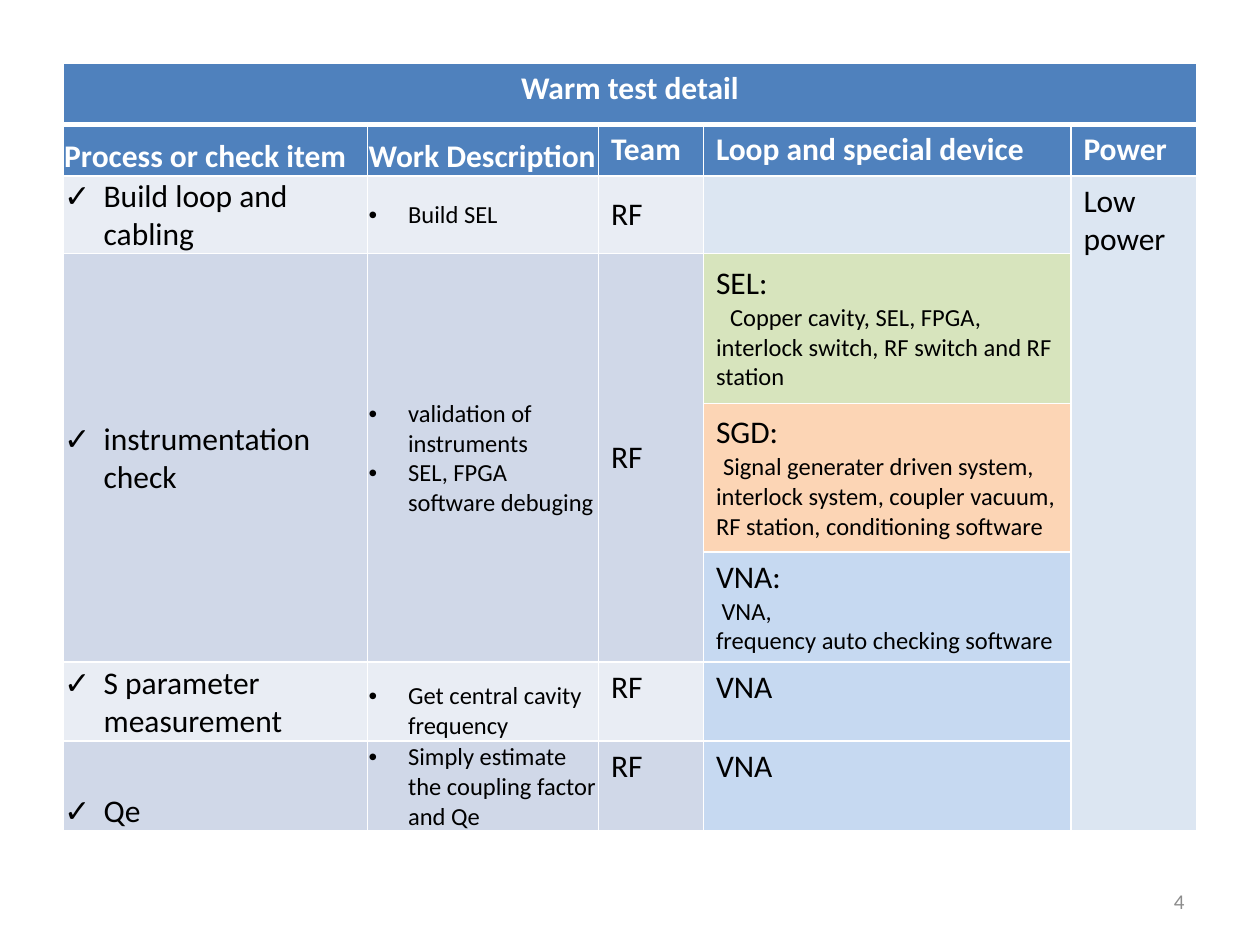
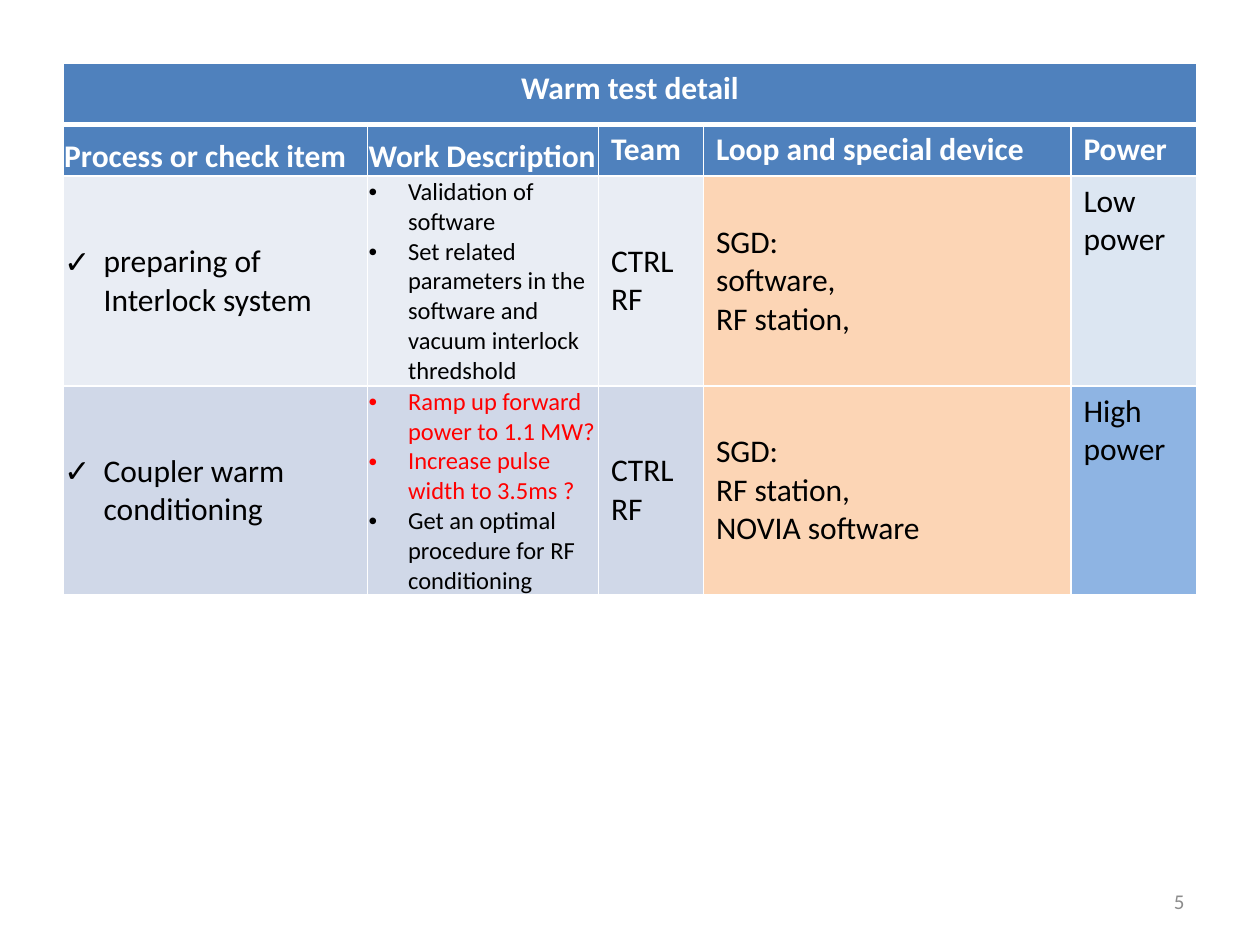
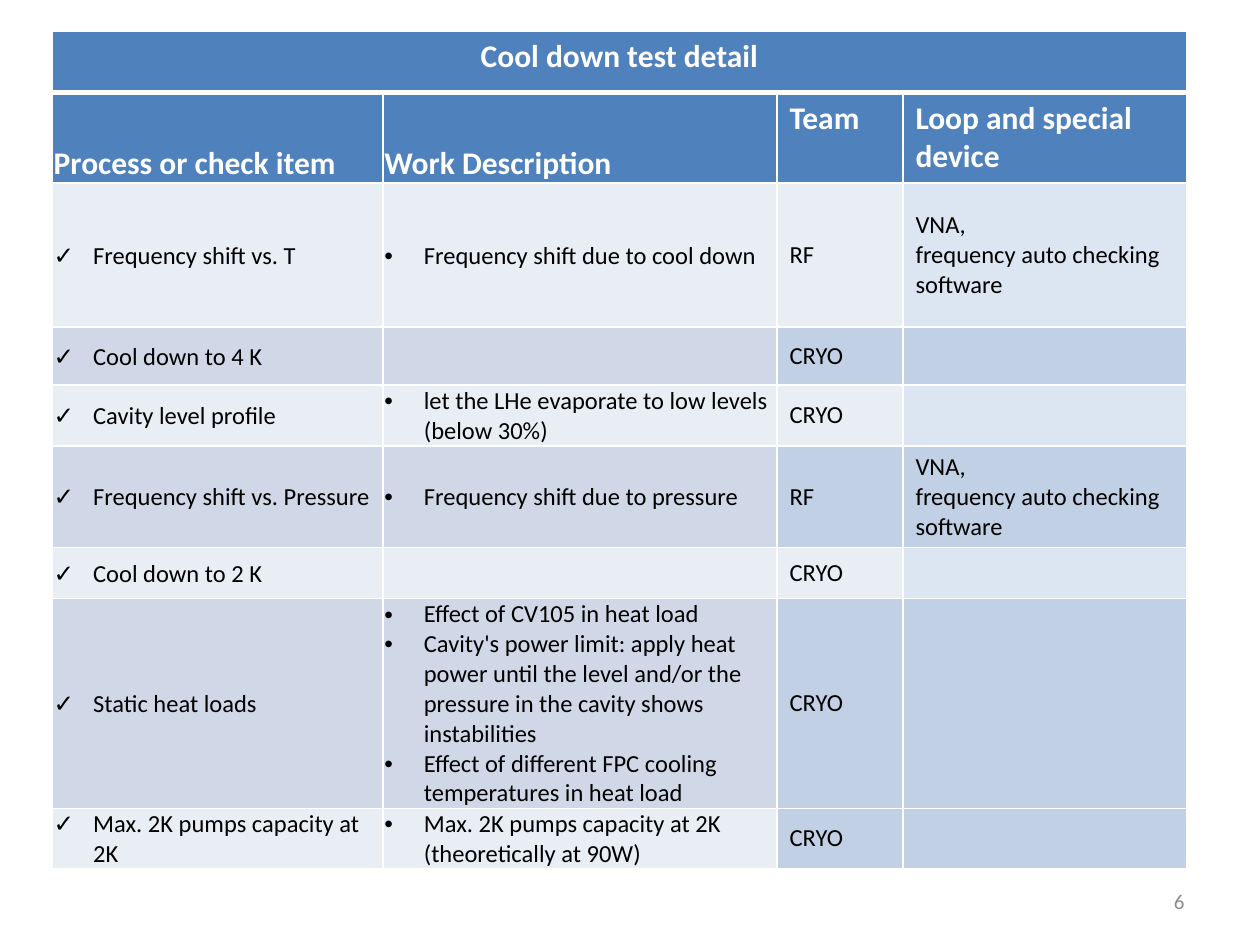
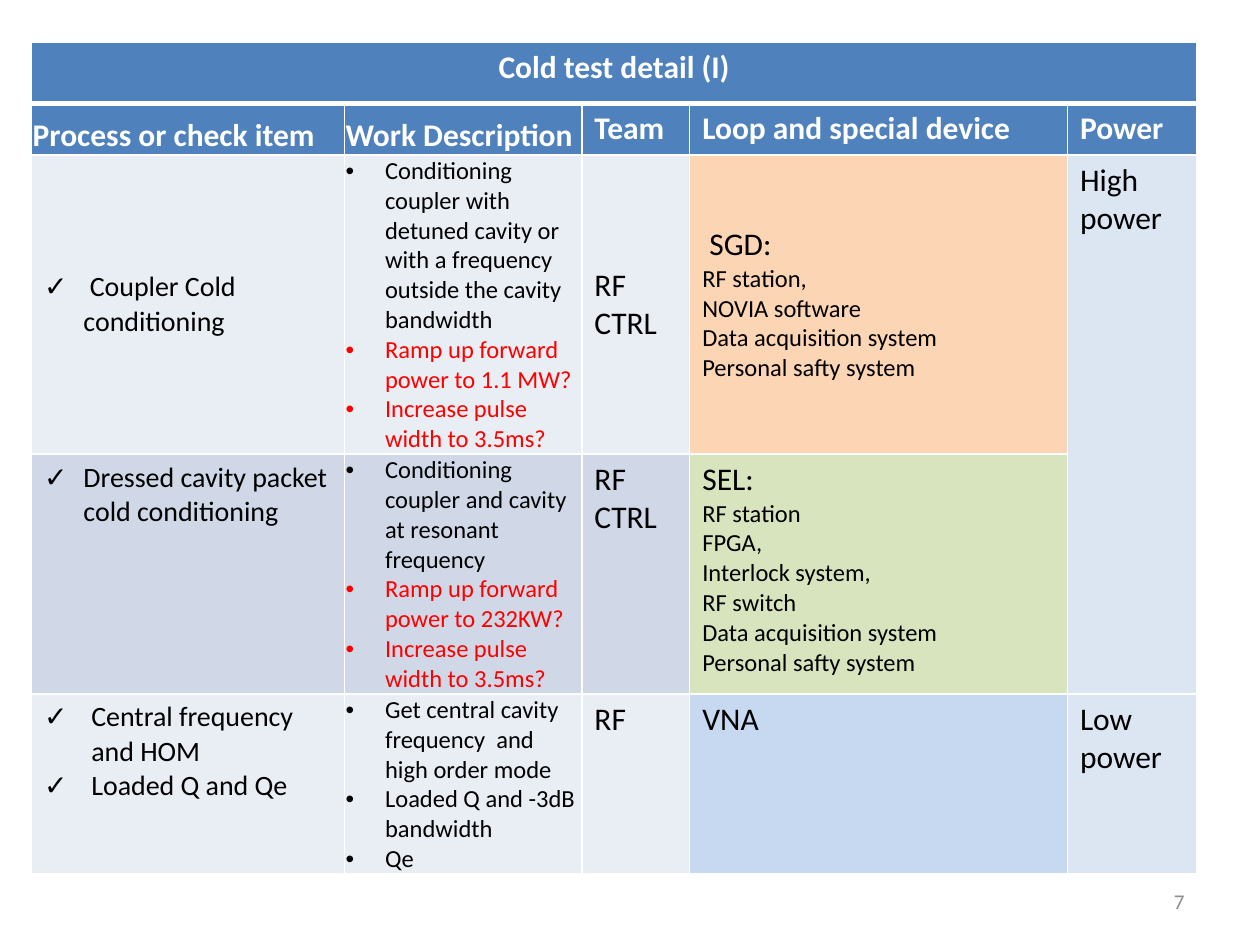
from dataclasses import dataclass
from lxml.etree import SubElement
from pptx import Presentation
from pptx.dml.color import RGBColor
from pptx.enum.text import MSO_ANCHOR as ANCHOR, PP_ALIGN as ALIGN
from pptx.oxml.ns import qn
from pptx.util import Pt

FONT = "Calibri"
WHITE = RGBColor(0xFF, 0xFF, 0xFF)
BLACK = RGBColor(0x00, 0x00, 0x00)
RED = RGBColor(0xFF, 0x00, 0x00)
GREY = RGBColor(0x8C, 0x8C, 0x8C)
HEADER = RGBColor(0x4F, 0x81, 0xBD)
BAND_LIGHT = RGBColor(0xE9, 0xED, 0xF4)
BAND_DARK = RGBColor(0xD0, 0xD8, 0xE8)
PALE_BLUE = RGBColor(0xDC, 0xE6, 0xF2)
STEEL_BLUE = RGBColor(0xC1, 0xD0, 0xE5)
VNA_BLUE = RGBColor(0xC6, 0xD9, 0xF1)
HIGH_BLUE = RGBColor(0x8E, 0xB4, 0xE3)
SEL_GREEN = RGBColor(0xD7, 0xE4, 0xBD)
SGD_ORANGE = RGBColor(0xFC, 0xD5, 0xB5)

HEADINGS = ["Process or check item", "Work Description", "Team",
            "Loop and special device", "Power"]
FIVE_COLS = [174, 132, 60, 210, 72]
FOUR_COLS = [189, 225, 72, 162]


@dataclass
class Para:
    text: str
    size: float = 18
    color: RGBColor = BLACK
    bold: bool = False
    align: ALIGN = ALIGN.LEFT
    bullet: str = ""
    hang: float = 22.5
    first: float = 0


@dataclass
class Cell:
    paras: list
    fill: RGBColor = None
    anchor: ANCHOR = ANCHOR.MIDDLE
    tight: bool = False
    rows: int = 1


def red(text):
    return Para(text, 14, RED, bullet="•")


def check(*texts, size=18, hang=22.5, tight=True, anchor=ANCHOR.MIDDLE):
    paras = [Para(t, size, bullet="✓", hang=hang) for t in texts]
    return Cell(paras, None, anchor, tight)


def work(*items, anchor=ANCHOR.MIDDLE):
    paras = [Para(i, 14, bullet="•") if isinstance(i, str) else i for i in items]
    return Cell(paras, None, anchor, True)


def plain(*texts, size=18, fill=None, anchor=ANCHOR.MIDDLE):
    return Cell([Para(t, size) for t in texts], fill, anchor)


def top(*texts, fill=None):
    return plain(*texts, fill=fill, anchor=ANCHOR.TOP)


def device(name, *details, fill, first=0, anchor=ANCHOR.MIDDLE):
    paras = [Para(name)] + [Para(d, 14, first=first) for d in details]
    return Cell(paras, fill, anchor)


def tall(rows, cell):
    cell.rows = rows
    return cell


def write_para(p, para):
    p.alignment = para.align
    pPr = p._p.get_or_add_pPr()
    if para.bullet:
        pPr.set("marL", str(Pt(para.hang)))
        pPr.set("indent", str(-Pt(para.hang)))
        SubElement(pPr, qn("a:buFont")).set("typeface", "Arial")
        SubElement(pPr, qn("a:buChar")).set("char", para.bullet)
    elif para.first:
        pPr.set("indent", str(Pt(para.first)))
    r = p.add_run()
    r.text = para.text
    r.font.name = FONT
    r.font.size = Pt(para.size)
    r.font.bold = para.bold
    r.font.color.rgb = para.color


def write_paras(tf, paras):
    tf.word_wrap = True
    for i, para in enumerate(paras):
        write_para(tf.add_paragraph() if i else tf.paragraphs[0], para)


def add_borders(tc, row):
    tcPr = tc._tc.get_or_add_tcPr()
    heavy = {0: "a:lnB", 1: "a:lnT"}.get(row)
    for side in ("a:lnL", "a:lnR", "a:lnT", "a:lnB"):
        ln = SubElement(tcPr, qn(side), w=str(Pt(3 if side == heavy else 1)))
        fill = SubElement(ln, qn("a:solidFill"))
        SubElement(fill, qn("a:srgbClr")).set("val", str(WHITE))


def fill_cell(tc, cell, band):
    tc.fill.solid()
    tc.fill.fore_color.rgb = cell.fill or band
    tc.vertical_anchor = cell.anchor
    if cell.tight:
        tc.margin_left = tc.margin_right = tc.margin_top = Pt(0.72)
        tc.margin_bottom = Pt(0)
    write_paras(tc.text_frame, cell.paras)


def header_rows(title, count):
    head = Cell([Para(title, 18, WHITE, True, ALIGN.CENTER)], HEADER, ANCHOR.TOP)
    names = []
    for i, name in enumerate(HEADINGS[:count]):
        tight = i < 2
        anchor = ANCHOR.BOTTOM if tight else ANCHOR.TOP
        names.append(Cell([Para(name, 18, WHITE, True)], HEADER, anchor, tight))
    return [[head] + [None] * (count - 1), names]


def add_detail_table(s, box, title, cols, heights, body):
    left, upper, width = box
    rows = header_rows(title, len(cols)) + body
    frame = s.shapes.add_table(len(rows), len(cols), Pt(left), Pt(upper),
                               Pt(width), Pt(sum(heights)))
    table = frame.table
    table.first_row = table.horz_banding = False
    for col, w in zip(table.columns, cols):
        col.width = Pt(round(w * width / sum(cols), 2))
    for row, h in zip(table.rows, heights):
        row.height = Pt(h)
    for i, row in enumerate(rows):
        band = BAND_DARK if i % 2 else BAND_LIGHT
        for j, cell in enumerate(row):
            tc = table.cell(i, j)
            add_borders(tc, i)
            if cell:
                fill_cell(tc, cell, band)
                if cell.rows > 1:
                    tc.merge(table.cell(i + cell.rows - 1, j))
    table.cell(0, 0).merge(table.cell(0, len(cols) - 1))


def add_page_number(s, number):
    sp = s.shapes.add_textbox(Pt(516), Pt(500.5), Pt(168), Pt(28.75))
    sp.text_frame.vertical_anchor = ANCHOR.MIDDLE
    write_paras(sp.text_frame, [Para(str(number), 12, GREY, align=ALIGN.RIGHT)])


WARM_LOOPS = [
    [check("Build loop and cabling"), work("Build SEL"), plain("RF"),
     Cell([], PALE_BLUE), tall(6, top("Low", "power", fill=PALE_BLUE))],
    [tall(3, check("instrumentation check")),
     tall(3, work("validation of instruments", "SEL, FPGA software debuging")),
     tall(3, plain("RF")),
     device("SEL:", "Copper cavity, SEL, FPGA, interlock switch, RF switch and RF station",
            fill=SEL_GREEN, first=8), None],
    [None, None, None,
     device("SGD:", "Signal generater driven system, interlock system, coupler vacuum, "
            "RF station, conditioning software", fill=SGD_ORANGE, first=4), None],
    [None, None, None,
     device("VNA:", " VNA,", "frequency auto checking software", fill=VNA_BLUE), None],
    [check("S parameter measurement", anchor=ANCHOR.BOTTOM),
     work("Get central cavity frequency", anchor=ANCHOR.BOTTOM),
     top("RF"), top("VNA", fill=VNA_BLUE), None],
    [check("Qe", anchor=ANCHOR.BOTTOM),
     work("Simply estimate the coupling factor and Qe", anchor=ANCHOR.BOTTOM),
     top("RF"), top("VNA", fill=VNA_BLUE), None],
]

WARM_CONDITIONING = [
    [check("preparing of Interlock system"),
     work("Validation of software",
          "Set related parameters in the software and vacuum interlock thredshold"),
     plain("CTRL", "RF"),
     plain("SGD:", "software,", "RF station,", fill=SGD_ORANGE),
     top("Low", "power", fill=PALE_BLUE)],
    [check("Coupler warm conditioning"),
     work(red("Ramp up forward power to 1.1 MW?"),
          red("Increase pulse width to 3.5ms ?"),
          "Get an optimal procedure for RF conditioning"),
     plain("CTRL", "RF"),
     plain("SGD:", "RF station,", "NOVIA software", fill=SGD_ORANGE),
     top("High", "power", fill=HIGH_BLUE)],
]

VNA_CHECK = ["VNA,", "frequency auto checking software"]
COOL_STEPS = [
    ("Frequency shift vs. T", ["Frequency shift due to cool down"], "RF", VNA_CHECK),
    ("Cool down to 4 K", [], "CRYO", []),
    ("Cavity level profile", ["let the LHe evaporate to low levels (below 30%)"], "CRYO", []),
    ("Frequency shift vs. Pressure", ["Frequency shift due to pressure"], "RF", VNA_CHECK),
    ("Cool down to 2 K", [], "CRYO", []),
    ("Static heat loads",
     ["Effect of CV105 in heat load",
      "Cavity's power limit: apply heat power until the level and/or the pressure "
      "in the cavity shows instabilities",
      "Effect of different FPC cooling temperatures in heat load"], "CRYO", []),
    ("Max. 2K pumps capacity at 2K",
     ["Max. 2K pumps capacity at 2K (theoretically at 90W)"], "CRYO", []),
]


def cool_down_rows():
    rows = []
    for i, (item, tasks, team, devices) in enumerate(COOL_STEPS):
        steel = i % 2 or i == len(COOL_STEPS) - 1
        rows.append([check(item, size=14), work(*tasks),
                     plain(team, size=14, fill=STEEL_BLUE if steel else None),
                     plain(*devices, size=14, fill=STEEL_BLUE if steel else PALE_BLUE)])
    return rows


SAFETY = ["Data acquisition system", "Personal safty system"]
PULSE = "Increase pulse width to 3.5ms?"
COLD = [
    [check(" Coupler Cold conditioning", size=16, tight=False),
     work("Conditioning coupler with detuned cavity or with a frequency outside "
          "the cavity bandwidth", red("Ramp up forward power to 1.1 MW?"), red(PULSE)),
     plain("RF", "CTRL"),
     device(" SGD:", "RF station,", "NOVIA software", *SAFETY, fill=SGD_ORANGE),
     tall(2, top("High", "power", fill=PALE_BLUE))],
    [check("Dressed cavity packet cold conditioning", size=16, tight=False,
           anchor=ANCHOR.TOP),
     work("Conditioning coupler and cavity at resonant frequency",
          red("Ramp up forward power to 232KW?"), red(PULSE), anchor=ANCHOR.BOTTOM),
     top("RF", "CTRL"),
     device("SEL:", "RF station", "FPGA,", "Interlock system,", "RF switch", *SAFETY,
            fill=SEL_GREEN, anchor=ANCHOR.TOP), None],
    [check("Central frequency and HOM", "Loaded Q and Qe", size=16, hang=27,
           tight=False, anchor=ANCHOR.TOP),
     work("Get central cavity frequency  and high order mode",
          "Loaded Q and -3dB bandwidth", "Qe", anchor=ANCHOR.BOTTOM),
     top("RF"), top("VNA", fill=VNA_BLUE), top("Low power", fill=PALE_BLUE)],
]


def main():
    prs = Presentation()
    prs.slide_width, prs.slide_height = Pt(720), Pt(540)
    warm_box = (36, 36, 648)
    pages = [
        (warm_box, "Warm test detail", FIVE_COLS,
         [35, 29.5, 44.5, 85.5, 85, 63, 45, 51], WARM_LOOPS),
        (warm_box, "Warm test detail", FIVE_COLS,
         [35, 29.5, 120, 119.5], WARM_CONDITIONING),
        ((30, 18, 648), "Cool down test detail", FOUR_COLS,
         [35, 51.5, 82.5, 33, 35, 58, 29, 120, 34.5], cool_down_rows()),
        ((18, 24, 666), "Cold test detail (I)", FIVE_COLS,
         [35, 29.5, 171, 137, 103], COLD),
    ]
    for number, page in enumerate(pages, 4):
        s = prs.slides.add_slide(prs.slide_layouts[6])
        add_page_number(s, number)
        add_detail_table(s, *page)
    prs.save("out.pptx")


if __name__ == "__main__":
    main()
